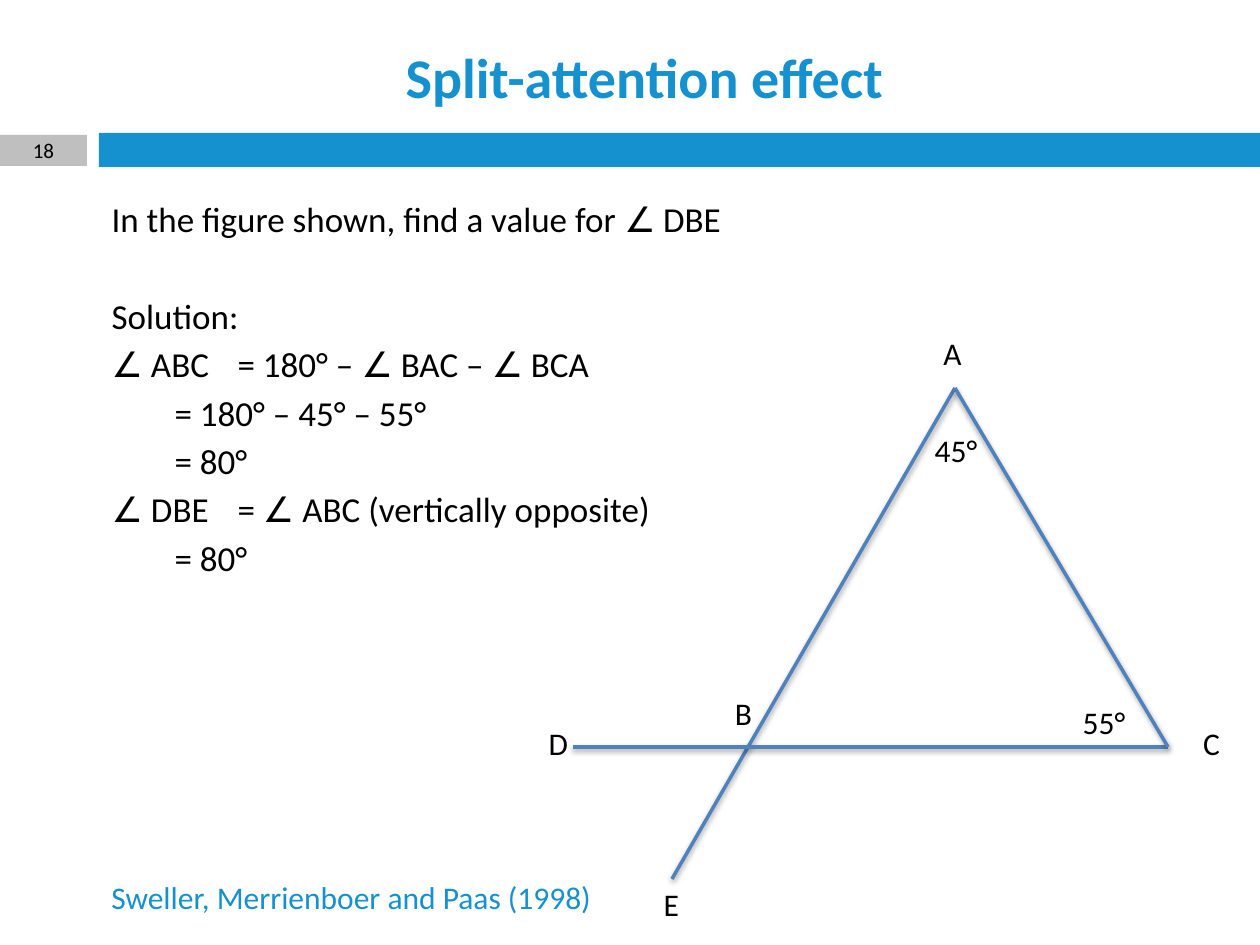
"""Build the slide on the split-attention effect."""
from lxml import etree
from pptx import Presentation
from pptx.dml.color import RGBColor
from pptx.enum.shapes import MSO_CONNECTOR, MSO_SHAPE
from pptx.enum.text import MSO_ANCHOR, MSO_AUTO_SIZE, PP_ALIGN
from pptx.oxml import parse_xml
from pptx.oxml.ns import nsdecls, qn
from pptx.util import Inches, Pt

RECT = MSO_SHAPE.RECTANGLE
LINE = MSO_CONNECTOR.STRAIGHT
TOP, MIDDLE = MSO_ANCHOR.TOP, MSO_ANCHOR.MIDDLE
LEFT, CENTER = PP_ALIGN.LEFT, PP_ALIGN.CENTER
NOFIT = MSO_AUTO_SIZE.NONE

BLUE = RGBColor(0x16, 0x91, 0xD0)
GRAY = RGBColor(0xBF, 0xBF, 0xBF)
STEEL = RGBColor(0x4F, 0x81, 0xBD)
BLACK = RGBColor(0, 0, 0)

TITLE = "Split-attention effect"
NUMBER = "18"
SOURCE = "Sweller, Merrienboer and Paas (1998)"
STEPS = [
    ("In the figure shown, find a value for ∠ DBE", 0),
    ("Solution:", 31.6),
    ("∠ ABC\t= 180° – ∠ BAC – ∠ BCA", 3.6),
    ("\t= 180° – 45° – 55°", 3.6),
    ("\t= 80°", 3.6),
    ("∠ DBE\t= ∠ ABC (vertically opposite)", 3.6),
    ("\t= 80°", 3.6),
]
POINTS = {"A": (955, 388), "C": (1168, 747), "D": (573, 747), "E": (672, 879)}
EDGES = ["EA", "DC", "CA"]
LABELS = [
    ("A", 907, 328, 91), ("B", 698, 688, 91), ("D", 513, 718, 91),
    ("C", 1166, 718, 91), ("E", 626, 879, 91),
    ("45°", 888, 425, 136), ("55°", 1036, 697, 136),
]
SHADOW = (
    f'<a:effectLst {nsdecls("a")}><a:outerShdw blurRad="40000" dist="20000" '
    'dir="5400000" rotWithShape="0"><a:srgbClr val="000000">'
    '<a:alpha val="38000"/></a:srgbClr></a:outerShdw></a:effectLst>'
)


def px(*nums):
    return [round(n * 914400 / 126) for n in nums]


def style(item, **values):
    for name, value in values.items():
        setattr(item, name, value)


def place(shape, box):
    style(shape, **dict(zip(("left", "top", "width", "height"), px(*box))))


def write(para, text, size, color=BLACK, align=LEFT, bold=False):
    para.alignment = align
    run = para.add_run()
    run.text = text
    style(run.font, name="Calibri", size=Pt(size), bold=bold)
    run.font.color.rgb = color


def add_bar(slide, box, color):
    bar = slide.shapes.add_shape(RECT, *px(*box))
    bar.shadow.inherit = False
    bar.fill.solid()
    bar.fill.fore_color.rgb = color
    bar.line.fill.background()
    return bar


def add_label(slide, text, box, **look):
    frame = slide.shapes.add_textbox(*px(*box)).text_frame
    frame.word_wrap = True
    write(frame.paragraphs[0], text, 18, **look)


def add_steps(body):
    frame = body.text_frame
    style(frame, auto_size=NOFIT, vertical_anchor=TOP, word_wrap=True)
    for i, (text, gap) in enumerate(STEPS):
        para = frame.add_paragraph() if i else frame.paragraphs[0]
        props = para._p.get_or_add_pPr()
        props.set("marL", "0")
        props.set("indent", "0")
        etree.SubElement(props, qn("a:buNone"))
        if "\t" in text:
            tabs = etree.SubElement(props, qn("a:tabLst"))
            for stop in (0.5, 1):
                etree.SubElement(tabs, qn("a:tab"), pos=str(Inches(stop)), algn="l")
        para.space_before = Pt(gap)
        write(para, text, 20)


def add_edge(slide, start, end):
    edge = slide.shapes.add_connector(LINE, *px(*POINTS[start], *POINTS[end]))
    edge.line.color.rgb = STEEL
    edge.line.width = Pt(2)
    edge._element.spPr.append(parse_xml(SHADOW))


def main():
    deck = Presentation()
    style(deck, slide_width=Inches(10), slide_height=Inches(7.5))
    slide = deck.slides.add_slide(deck.slide_layouts[1])
    title, body = slide.placeholders

    add_bar(slide, (99, 133, 1161, 34), BLUE)
    badge = add_bar(slide, (0, 135, 87, 31), GRAY).text_frame
    style(badge, vertical_anchor=MIDDLE, margin_top=0, margin_bottom=0)
    write(badge.paragraphs[0], NUMBER, 12, align=CENTER)

    place(title, (99, 33, 1091, 86))
    style(title.text_frame, auto_size=NOFIT, vertical_anchor=MIDDLE)
    write(title.text_frame.paragraphs[0], TITLE, 32, BLUE, CENTER, True)
    place(body, (99, 191, 1041, 624))
    add_steps(body)

    for start, end in EDGES:
        add_edge(slide, start, end)
    for text, left, top, width in LABELS:
        add_label(slide, text, (left, top, width, 50), align=CENTER)
    add_label(slide, SOURCE, (99, 872, 528, 50), color=BLUE)
    deck.save("out.pptx")


if __name__ == "__main__":
    main()
